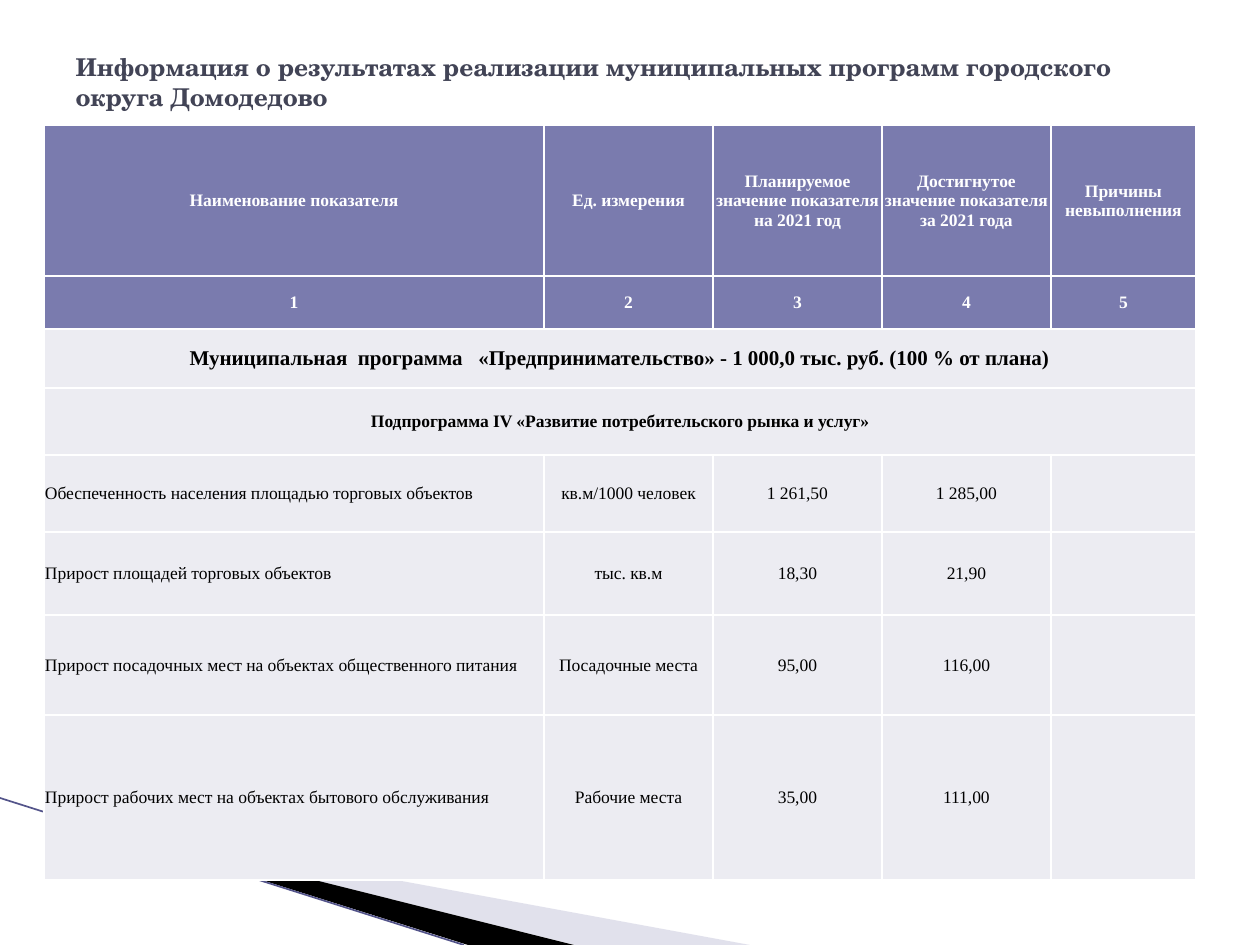
from lxml import etree
from pptx import Presentation
from pptx.dml.color import RGBColor
from pptx.enum.shapes import MSO_CONNECTOR
from pptx.enum.text import MSO_ANCHOR, MSO_AUTO_SIZE, PP_ALIGN
from pptx.oxml import parse_xml
from pptx.oxml.ns import nsdecls, qn
from pptx.util import Pt

PX = 914400 / 126
TITLE_ONLY = 5
STRAIGHT = MSO_CONNECTOR.STRAIGHT
MIDDLE = MSO_ANCHOR.MIDDLE
NO_AUTOFIT = MSO_AUTO_SIZE.NONE
LEFT, CENTER = PP_ALIGN.LEFT, PP_ALIGN.CENTER

WHITE = RGBColor(0xFF, 0xFF, 0xFF)
BLACK = RGBColor(0x00, 0x00, 0x00)
SLATE = RGBColor(0x42, 0x44, 0x56)
HEADER_FILL = RGBColor(0x7A, 0x7B, 0xAE)
BODY_FILL = RGBColor(0xEC, 0xEC, 0xF2)
LAVENDER = RGBColor(0xB6, 0xB6, 0xD1)
VIOLET = RGBColor(0x53, 0x54, 0x8A)

TABLE_FONT = "Times New Roman"
TITLE_FORMAT = {"name": "TeX Gyre Schola", "size": Pt(14), "bold": True}
HEADER_FORMAT = {"name": TABLE_FONT, "size": Pt(10), "bold": True}
PROGRAM_FORMAT = {**HEADER_FORMAT, "size": Pt(12)}
BODY_FORMAT = {**HEADER_FORMAT, "bold": False}

TITLE = ("Информация о результатах реализации муниципальных программ "
         "городского округа Домодедово")
COLUMN_WIDTHS = [500, 169, 169, 169, 145]
# Each row: height, fill, text colour, format, texts; a single text spans the row
ROWS = [
    (151, HEADER_FILL, WHITE, HEADER_FORMAT,
     ["Наименование показателя", "Ед. измерения",
      "Планируемое значение показателя на 2021 год",
      "Достигнутое значение показателя за 2021 года",
      "Причины невыполнения"]),
    (53, HEADER_FILL, WHITE, HEADER_FORMAT, ["1", "2", "3", "4", "5"]),
    (59, BODY_FILL, BLACK, PROGRAM_FORMAT,
     ["Муниципальная  программа   «Предпринимательство» - "
      "1 000,0 тыс. руб. (100 % от плана)"]),
    (67, BODY_FILL, BLACK, HEADER_FORMAT,
     ["Подпрограмма IV «Развитие потребительского рынка и услуг»"]),
    (77, BODY_FILL, BLACK, BODY_FORMAT,
     ["Обеспеченность населения площадью торговых объектов",
      "кв.м/1000 человек", "1 261,50", "1 285,00", ""]),
    (83, BODY_FILL, BLACK, BODY_FORMAT,
     ["Прирост площадей торговых объектов", "тыс. кв.м", "18,30", "21,90", ""]),
    (100, BODY_FILL, BLACK, BODY_FORMAT,
     ["Прирост посадочных мест на объектах общественного питания",
      "Посадочные места", "95,00", "116,00", ""]),
    (165, BODY_FILL, BLACK, BODY_FORMAT,
     ["Прирост рабочих мест на объектах бытового обслуживания",
      "Рабочие места", "35,00", "111,00", ""]),
]


def px(length):
    return round(length * PX)


def write(para, text, color, font_format):
    span = para.add_run()
    span.text = text
    for name, value in font_format.items():
        setattr(span.font, name, value)
    span.font.color.rgb = color


def add_wedge(page, left, top, points, color, opacity=100):
    corners = [(px(left + x), px(top + y)) for x, y in points]
    builder = page.shapes.build_freeform(*corners[0])
    builder.add_line_segments(corners[1:], close=True)
    wedge = builder.convert_to_shape()
    wedge.shadow.inherit = False
    wedge.fill.solid()
    wedge.fill.fore_color.rgb = color
    wedge.line.fill.background()
    if opacity < 100:
        tint = wedge.fill._xPr.find(".//" + qn("a:srgbClr"))
        etree.SubElement(tint, qn("a:alpha"), val=str(opacity * 1000))


def add_backdrop(page, left, top, width, height):
    # Wedges sweeping down to the bottom edge, then the thin diagonal
    add_wedge(page, left, top, [(69, 22), (750, height), (575, height), (69, 21)],
              LAVENDER, 40)
    add_wedge(page, left, top, [(67, 20), (574, height), (468, height), (68, 21)], BLACK)
    diagonal = page.shapes.add_connector(
        STRAIGHT, px(left), px(top), px(left + width), px(top + height))
    diagonal.line.color.rgb = VIOLET
    diagonal.line.width = Pt(0.95)
    etree.SubElement(diagonal._element.spPr, qn("a:effectLst"))


def add_title(page, left, top, width, height):
    title = page.shapes.title
    title.left, title.top = px(left), px(top)
    title.width, title.height = px(width), px(height)
    frame = title.text_frame
    frame.word_wrap = True
    frame.auto_size = NO_AUTOFIT
    frame.vertical_anchor = MIDDLE
    para = frame.paragraphs[0]
    para.alignment = LEFT
    write(para, TITLE, SLATE, TITLE_FORMAT)


def style_cell(cell, fill):
    cell.fill.solid()
    cell.fill.fore_color.rgb = fill
    cell.vertical_anchor = MIDDLE
    cell.margin_left = cell.margin_top = cell.margin_right = px(1)
    cell.margin_bottom = 0
    # Borders go before the fill in the cell properties
    for index, side in enumerate(("lnL", "lnR", "lnT", "lnB")):
        border = parse_xml(
            f'<a:{side} {nsdecls("a")} w="{Pt(1)}"><a:solidFill>'
            f'<a:srgbClr val="{WHITE}"/></a:solidFill></a:{side}>')
        cell._tc.tcPr.insert(index, border)


def add_indicators(page, left, top):
    table = page.shapes.add_table(
        len(ROWS), len(COLUMN_WIDTHS), px(left), px(top),
        px(sum(COLUMN_WIDTHS)), px(sum(row[0] for row in ROWS))).table
    table.first_row = table.horz_banding = False
    for column, width in zip(table.columns, COLUMN_WIDTHS):
        column.width = px(width)
    for r, (height, fill, color, font_format, texts) in enumerate(ROWS):
        table.rows[r].height = px(height)
        for c in range(len(COLUMN_WIDTHS)):
            style_cell(table.cell(r, c), fill)
        if len(texts) == 1:
            table.cell(r, 0).merge(table.cell(r, len(COLUMN_WIDTHS) - 1))
        for c, text in enumerate(texts):
            if text:
                para = table.cell(r, c).text_frame.paragraphs[0]
                is_name = c == 0 and font_format is BODY_FORMAT
                para.alignment = LEFT if is_name else CENTER
                write(para, text, color, font_format)


def main():
    deck = Presentation()
    deck.slide_width, deck.slide_height = px(1260), px(945)
    page = deck.slides.add_slide(deck.slide_layouts[TITLE_ONLY])
    add_backdrop(page, 0, 798, 464, 147)
    add_title(page, 63, 38, 1134, 87)
    add_indicators(page, 44, 125)
    deck.save("out.pptx")


if __name__ == "__main__":
    main()
